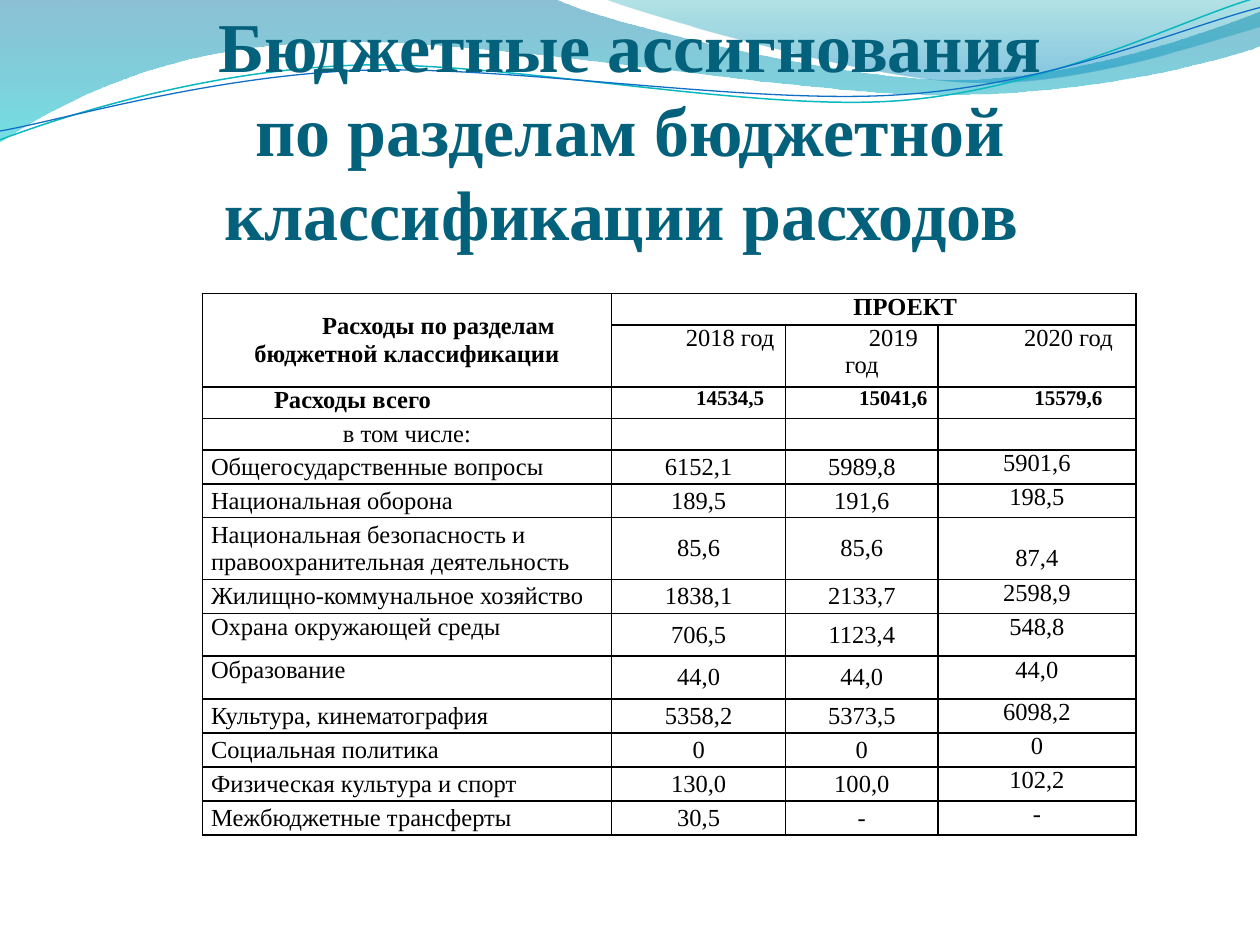
from typing import NamedTuple

from lxml import etree
from pptx import Presentation
from pptx.dml.color import RGBColor
from pptx.enum import text
from pptx.oxml.ns import qn
from pptx.util import Inches, Pt

FONT = "Times New Roman"
BLACK = RGBColor(0, 0, 0)
TEAL = RGBColor(0x04, 0x61, 0x7B)
MID, TOP, LOW = (text.MSO_ANCHOR.MIDDLE, text.MSO_ANCHOR.TOP,
                 text.MSO_ANCHOR.BOTTOM)
LEFT, MIDDLE = text.PP_ALIGN.LEFT, text.PP_ALIGN.CENTER


class Stop(NamedTuple):
    place: float
    color: RGBColor
    alpha: int


class Wave(NamedTuple):
    """A start point, then steps: two numbers a line, six a Bezier curve."""
    start: tuple
    steps: list
    stops: tuple = ()
    color: RGBColor = BLACK
    width: float = 0


WAVES = [
    Wave((0, 0), [
        (4.4, -0.01),
        (4.76, 0.17, 6.64, 0.63, 7.58, 0.63), (8.53, 0.63, 9.58, 0.26, 10, 0.09),
        (10.01, 0.36),
        (9.83, 0.44, 8.7, 0.76, 7.46, 0.75), (6.22, 0.75, 3.82, 0.28, 2.57, 0.34),
        (1.29, 0.36, 0.46, 0.83, -0.01, 1.13)],
        (Stop(0, RGBColor(0x00, 0x74, 0xA1), 45),
         Stop(1, RGBColor(0x00, 0xC6, 0xCF), 55))),
    Wave((4.79, -0.01), [
        (5.09, 0.11, 6.82, 0.62, 7.69, 0.65), (8.56, 0.69, 9.61, 0.32, 10, 0.21),
        (10, 0)],
        (Stop(0, RGBColor(0x00, 0xA1, 0xA9), 30),
         Stop(0.8, RGBColor(0x00, 0x8B, 0xBF), 45))),
    Wave((0, 1.11), [
        (0.48, 0.93, 1.58, 0.57, 2.77, 0.52), (3.95, 0.47, 5.93, 0.89, 7.13, 0.8),
        (8.33, 0.71, 9.38, 0.15, 9.98, -0.02)],
        color=RGBColor(0x0A, 0xB8, 0xBF), width=0.85),
    Wave((0, 1.04), [
        (0.47, 0.96, 1.64, 0.61, 2.83, 0.56), (4.03, 0.51, 5.97, 0.84, 7.17, 0.75),
        (8.36, 0.67, 9.41, 0.21, 10, 0.06)],
        color=RGBColor(0x0F, 0x6F, 0xC6), width=0.75),
]

COLS = [3.25, 1.38, 1.21, 1.57]
HEADS = [
    ("Расходы по разделам бюджетной классификации", "ПРОЕКТ", "", ""),
    ("", "2018 год", "2019 год", "2020 год"),
    ("Расходы всего", "14534,5", "15041,6", "15579,6"),
]
ITEMS = [
    ("в том числе:", "", "", ""),
    ("Общегосударственные вопросы", "6152,1", "5989,8", "5901,6"),
    ("Национальная оборона", "189,5", "191,6", "198,5"),
    ("Национальная безопасность и правоохранительная деятельность",
     "85,6", "85,6", "87,4"),
    ("Жилищно-коммунальное хозяйство", "1838,1", "2133,7", "2598,9"),
    ("Охрана окружающей среды", "706,5", "1123,4", "548,8"),
    ("Образование", "44,0", "44,0", "44,0"),
    ("Культура, кинематография", "5358,2", "5373,5", "6098,2"),
    ("Социальная политика", "0", "0", "0"),
    ("Физическая культура и спорт", "130,0", "100,0", "102,2"),
    ("Межбюджетные трансферты", "30,5", "-", "-"),
]
ROWS = HEADS + ITEMS
HIGH = {0: 0.25, 1: 0.49, 2: 0.25, 3: 0.25, 6: 0.49, 8: 0.34, 9: 0.34}
TOTAL, SUB, SAFETY, TALL = 2, 3, 6, (8, 9)


def bend(shape, steps: list) -> None:
    """Turn the straight segments of six-number steps into Bezier curves."""
    lines = list(shape._element.iter(qn("a:lnTo")))
    for line, step in zip(lines, steps):
        if len(step) == 2:
            continue
        curve = etree.Element(qn("a:cubicBezTo"))
        for x, y in zip(step[::2], step[1::2]):
            etree.SubElement(curve, qn("a:pt"), x=str(Inches(x) - shape.left),
                             y=str(Inches(y) - shape.top))
        line.getparent().replace(line, curve)


def draw_wave(slide, wave: Wave) -> None:
    first, *rest = [(Inches(x), Inches(y)) for x, y in
                    [wave.start] + [step[-2:] for step in wave.steps]]
    pen = slide.shapes.build_freeform(*first)
    pen.add_line_segments(rest, close=bool(wave.stops))
    shape = pen.convert_to_shape()
    bend(shape, wave.steps)
    shape.shadow.inherit = False
    if not wave.stops:
        shape.fill.background()
        shape.line.color.rgb = wave.color
        shape.line.width = Pt(wave.width)
        return
    shape.line.fill.background()
    shape.fill.gradient()
    shape.fill.gradient_angle = 270
    for stop, data in zip(shape.fill.gradient_stops, wave.stops):
        stop.position = data.place
        stop.color.rgb = data.color
        etree.SubElement(stop._gs[0], qn("a:alpha"), val=str(data.alpha * 1000))


def write(frame, words: str, *, size: float = 14, bold: bool = False,
          color: RGBColor = BLACK, align=MIDDLE, indent: float = 0) -> None:
    para = frame.paragraphs[0]
    para.text = words
    para.alignment = align
    if indent:
        para._p.get_or_add_pPr().set("indent", str(Inches(indent)))
    for run in para.runs:
        font = run.font
        font.name, font.size, font.bold = FONT, Pt(size), bold
        font.color.rgb = color
    if not words:
        etree.SubElement(para._p, qn("a:endParaRPr"), sz=str(size * 100))


def frame_cell(cell) -> None:
    """Give a cell thin black borders and no fill."""
    props = cell._tc.get_or_add_tcPr()
    for side in ("lnL", "lnR", "lnT", "lnB"):
        line = etree.SubElement(props, qn("a:" + side), w=str(Pt(1)))
        fill = etree.SubElement(line, qn("a:solidFill"))
        etree.SubElement(fill, qn("a:srgbClr"), val=str(BLACK))
    cell.fill.background()


def fill_cell(cell, row: int, col: int) -> None:
    cell.margin_left = cell.margin_right = Inches(0.07)
    cell.margin_top = cell.margin_bottom = 0
    last = len(COLS) - 1
    if row < SUB:
        mid = row == col == 0
    else:
        mid = col < last and not (col == 0 and row in TALL)
    cell.vertical_anchor = MID if mid else TOP
    if (row, col) == (SAFETY, last):
        cell.margin_top = Inches(0.21)
    flush = col == 0 and row not in (0, SUB)
    write(cell.text_frame, ROWS[row][col],
          size=12 if row == TOTAL and col else 14,
          bold=row in (0, TOTAL), align=LEFT if flush else MIDDLE,
          indent=0.5 if row < SUB else 0)
    frame_cell(cell)


def draw_table(slide) -> None:
    table = slide.shapes.add_table(
        len(ROWS), len(COLS), Inches(1.605), Inches(2.33),
        Inches(sum(COLS)), Inches(4.3)).table
    table.first_row = table.horz_banding = False
    for col, width in enumerate(COLS):
        table.columns[col].width = Inches(width)
    for row in range(len(ROWS)):
        table.rows[row].height = Inches(HIGH.get(row, 0.27))
        for col in range(len(COLS)):
            fill_cell(table.cell(row, col), row, col)
    table.cell(0, 0).merge(table.cell(1, 0))
    table.cell(0, 1).merge(table.cell(0, 3))


def draw_title(slide) -> None:
    box = slide.shapes.add_textbox(Inches(0.5), Inches(0.77),
                                   Inches(9), Inches(1.25))
    frame = box.text_frame
    frame.word_wrap = True
    frame.vertical_anchor = LOW
    frame.margin_left = frame.margin_right = frame.margin_bottom = 0
    write(frame, "Бюджетные ассигнования\v"
          "по разделам бюджетной классификации расходов ",
          size=40, bold=True, color=TEAL)


def main() -> None:
    deck = Presentation()
    deck.slide_width, deck.slide_height = Inches(10), Inches(7.5)
    slide = deck.slides.add_slide(deck.slide_layouts[6])
    for wave in WAVES:
        draw_wave(slide, wave)
    draw_title(slide)
    draw_table(slide)
    deck.save("out.pptx")


if __name__ == "__main__":
    main()
